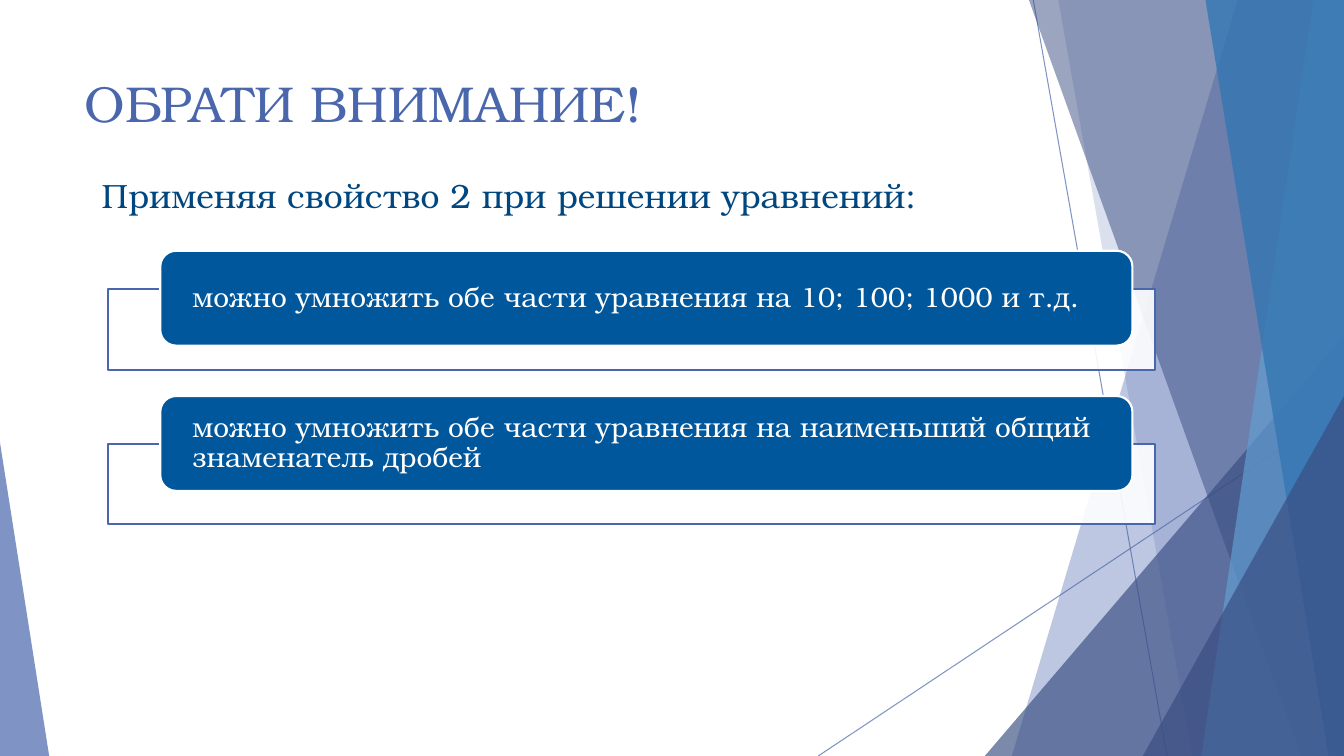
from dataclasses import dataclass

from lxml import etree
from pptx import Presentation
from pptx import util as u
from pptx.dml.color import RGBColor
from pptx.enum import shapes, text
from pptx.oxml.ns import qn


@dataclass(frozen=True)
class Theme:
    font: str = "TeX Gyre Bonum"
    accent: str = "4A66AC"
    navy: str = "384C81"
    sky: str = "629DD1"
    azure: str = "3477B2"
    lead: str = "004780"
    card: str = "00579C"
    white: str = "FFFFFF"
    title_size: int = 36
    lead_size: int = 24
    card_size: int = 20


@dataclass(frozen=True)
class Box:
    left: float
    top: float
    width: float
    height: float

    def lengths(self):
        return [u.Cm(v) for v in (self.left, self.top, self.width, self.height)]


THEME = Theme()
PAGE = Box(0, 0, 33.87, 19.05)


def paint(fill, color, opacity=100):
    fill.solid()
    fill.fore_color.rgb = RGBColor.from_string(color)
    if opacity < 100:
        tint = fill._xPr.find(qn("a:solidFill"))[0]
        etree.SubElement(tint, qn("a:alpha"), val=str(opacity * 1000))


def style(shape, color, opacity=100, outline=None):
    shape.shadow.inherit = False
    paint(shape.fill, color, opacity)
    if outline:
        paint(shape.line.fill, outline)
        shape.line.width = u.Pt(1.5)
    else:
        shape.line.fill.background()


def write(frame, words, size, color):
    frame.word_wrap = True
    frame.auto_size = text.MSO_AUTO_SIZE.NONE
    paragraph = frame.paragraphs[0]
    paragraph.alignment = text.PP_ALIGN.LEFT
    paragraph.space_before = u.Pt(0)
    run = paragraph.add_run()
    run.text = words
    run.font.name = THEME.font
    run.font.size = u.Pt(size)
    run.font.color.rgb = RGBColor.from_string(color)
    return paragraph


def add_ray(slide, start, end):
    ray = slide.shapes.add_connector(
        shapes.MSO_CONNECTOR.STRAIGHT, *(u.Cm(v) for v in start + end))
    paint(ray.line.fill, THEME.accent, 70)
    ray.line.width = u.Pt(0.75)
    etree.SubElement(ray._element.spPr, qn("a:effectLst"))


def add_facet(slide, box, top_x, bottom_x, color, opacity):
    right, bottom = box.left + box.width, box.top + box.height
    corners = [(right, box.top), (right, bottom), (bottom_x, bottom)]
    outline = slide.shapes.build_freeform(u.Cm(top_x), u.Cm(box.top), 1.0)
    outline.add_line_segments([(u.Cm(x), u.Cm(y)) for x, y in corners], close=True)
    style(outline.convert_to_shape(), color, opacity)


def add_wedge(slide, box, apex, color, opacity):
    wedge = slide.shapes.add_shape(
        shapes.MSO_SHAPE.ISOSCELES_TRIANGLE, *box.lengths())
    wedge.adjustments[0] = apex
    style(wedge, color, opacity)


def corner_box(box, left, top):
    return Box(left, top, box.left + box.width - left, box.top + box.height - top)


def draw_backdrop(slide, box):
    right, bottom = box.left + box.width, box.top + box.height
    add_ray(slide, (26.04, box.top), (29.41, bottom))
    add_ray(slide, (right, 10.24), (20.62, bottom))
    add_facet(slide, box, 31.19, 25.5, THEME.accent, 36)
    add_facet(slide, box, 26.67, 30.05, THEME.accent, 20)
    add_wedge(slide, corner_box(box, 24.82, 8.46), 1, THEME.navy, 66)
    add_facet(slide, box, 25.93, 32.79, THEME.navy, 50)
    add_facet(slide, box, 33.1, 30.28, THEME.sky, 70)
    add_facet(slide, box, 30.38, 33.48, THEME.azure, 80)
    add_wedge(slide, corner_box(box, 28.8, 9.98), 1, THEME.navy, 66)
    add_wedge(slide, Box(box.left, 11.15, 1.24, bottom - 11.15), 0, THEME.accent, 70)


def fill_placeholder(slide, holder, box, words, size, color):
    slide.shapes._spTree.append(holder._element)
    holder.left, holder.top, holder.width, holder.height = box.lengths()
    holder.text_frame.vertical_anchor = text.MSO_ANCHOR.TOP
    return write(holder.text_frame, words, size, color)


def draw_heading(slide, box):
    fill_placeholder(slide, slide.shapes.title, box, "ОБРАТИ ВНИМАНИЕ!",
                     THEME.title_size, THEME.accent)


def draw_lead(slide, box):
    lead = fill_placeholder(slide, slide.placeholders[1], box,
                            "Применяя свойство 2 при решении уравнений:",
                            THEME.lead_size, THEME.lead)
    properties = lead._p.get_or_add_pPr()
    properties.set("marL", "0")
    properties.set("indent", "0")
    etree.SubElement(properties, qn("a:buNone"))


def draw_advice(slide, box, tips):
    card_pitch, frame_pitch, frame_drop = 3.66, 3.89, 0.97
    for i, tip in enumerate(tips):
        frame_box = Box(box.left, box.top + frame_drop + i * frame_pitch, box.width, 2.03)
        card_box = Box(box.left + 1.32, box.top + i * card_pitch, box.width - 1.89, 2.39)
        frame = slide.shapes.add_shape(shapes.MSO_SHAPE.RECTANGLE, *frame_box.lengths())
        style(frame, THEME.white, 90, THEME.accent)
        card = slide.shapes.add_shape(
            shapes.MSO_SHAPE.ROUNDED_RECTANGLE, *card_box.lengths())
        style(card, THEME.card, outline=THEME.white)
        label = card.text_frame
        label.margin_left = label.margin_right = u.Cm(0.69)
        label.margin_top = label.margin_bottom = 0
        label.vertical_anchor = text.MSO_ANCHOR.MIDDLE
        write(label, tip, THEME.card_size, THEME.white).line_spacing = 0.9


def main():
    deck = Presentation()
    deck.slide_width, deck.slide_height = u.Cm(PAGE.width), u.Cm(PAGE.height)
    slide = deck.slides.add_slide(deck.slide_layouts[1])
    draw_backdrop(slide, PAGE)
    draw_heading(slide, Box(1.88, 1.7, 23.88, 3.66))
    draw_lead(slide, Box(2.31, 4.29, 28.55, 12.73))
    draw_advice(slide, Box(2.72, 6.32, 26.39, 6.89), [
        "можно умножить обе части уравнения на 10; 100; 1000 и т.д.",
        "можно умножить обе части уравнения на наименьший общий знаменатель дробей",
    ])
    deck.save("out.pptx")


if __name__ == "__main__":
    main()
